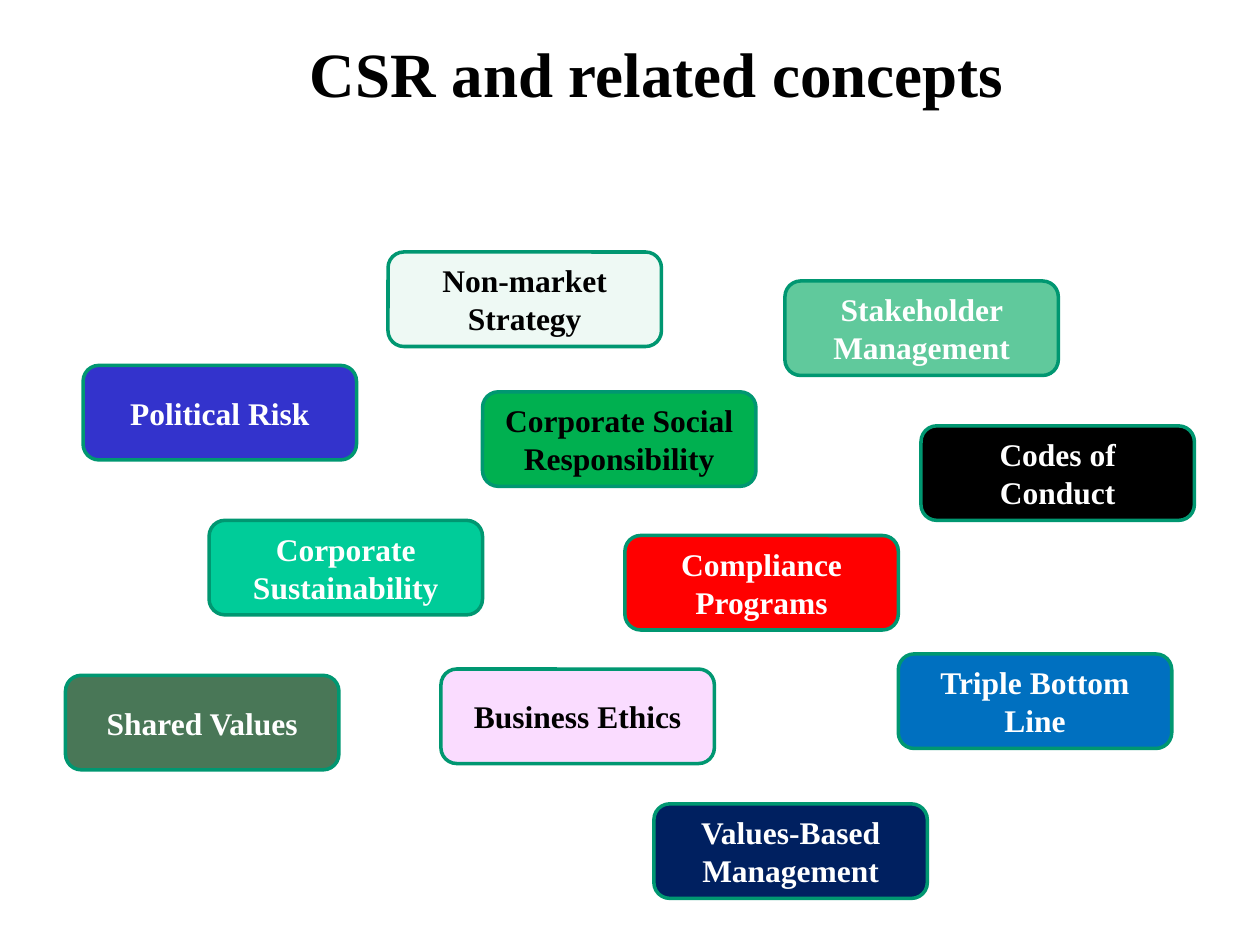
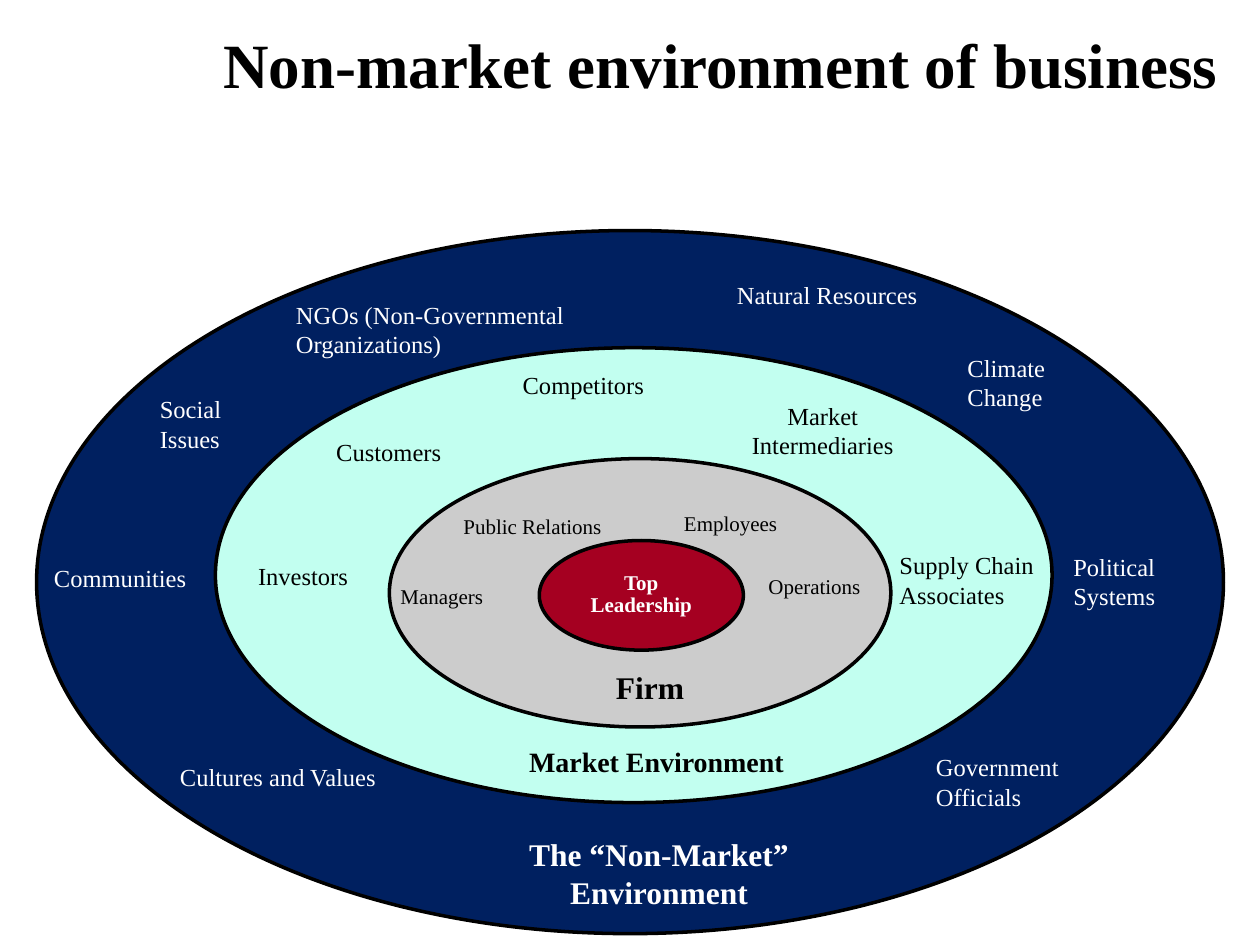
from pptx import Presentation
from pptx.dml.color import RGBColor
from pptx.enum.shapes import MSO_SHAPE
from pptx.enum.text import MSO_ANCHOR, MSO_AUTO_SIZE, PP_ALIGN
from pptx.util import Inches, Pt

LEFT, CENTER = PP_ALIGN.LEFT, PP_ALIGN.CENTER
TOP, MIDDLE = MSO_ANCHOR.TOP, MSO_ANCHOR.MIDDLE
ROUNDED, ELLIPSE = MSO_SHAPE.ROUNDED_RECTANGLE, MSO_SHAPE.OVAL
FIXED, GROW = MSO_AUTO_SIZE.NONE, MSO_AUTO_SIZE.SHAPE_TO_FIT_TEXT

FONT = "Times New Roman"
TITLE_ONLY = 5
COLORS = {
    "black": "000000", "white": "FFFFFF", "border": "009771",
    "indigo": "3333CC", "blue": "0070C0", "teal": "00CC99",
    "pale green": "EEF9F4", "green": "00B050", "pink": "FADCFF",
    "soft green": "60C99C", "red": "FF0000", "moss": "497757",
    "navy": "002060", "mint": "C2FFF0", "gray": "CCCCCC",
    "crimson": "A50021",
}


def write_text(shape, text, size, color, bold=False, align=LEFT, anchor=TOP, spacing=None):
    frame = shape.text_frame
    frame.text = text
    frame.word_wrap = True
    frame.auto_size = FIXED
    frame.vertical_anchor = anchor
    for para in frame.paragraphs:
        para.alignment = align
        para.line_spacing = spacing
        for span in para.runs:
            span.font.name = FONT
            span.font.size = Pt(size)
            span.font.bold = bold
            span.font.color.rgb = RGBColor.from_string(COLORS[color])


def add_outlined(shapes, kind, bounds, fill, line):
    shape = shapes.add_shape(kind, *map(Inches, bounds))
    shape.shadow.inherit = False
    shape.fill.solid()
    shape.fill.fore_color.rgb = RGBColor.from_string(COLORS[fill])
    shape.line.color.rgb = RGBColor.from_string(COLORS[line])
    shape.line.width = Pt(2)
    return shape


deck = Presentation()
deck.slide_width, deck.slide_height = Inches(10), Inches(7.5)

titles = [
    ("CSR and related concepts", (2.36, 0.29, 6.83, 0.75)),
    ("Non-market environment of business", (1.67, 0.22, 8.17, 0.76)),
]
for text, bounds in titles:
    page = deck.slides.add_slide(deck.slide_layouts[TITLE_ONLY])
    title = page.shapes.title
    title.left, title.top, title.width, title.height = map(Inches, bounds)
    write_text(title, text, 36, "black", bold=True, spacing=0.9)
concepts_page, environment_page = deck.slides

# Slide 1: scattered concept cards
CARD_WIDTH, CARD_HEIGHT = 2.17, 0.75
concepts = [
    ("Political Risk", 0.66, 2.9, "indigo", "white"),
    ("Triple Bottom Line", 7.13, 5.19, "blue", "white"),
    ("Corporate Sustainability", 1.66, 4.13, "teal", "white"),
    ("Non-market Strategy", 3.08, 2, "pale green", "black"),
    ("Corporate Social Responsibility", 3.83, 3.11, "green", "black"),
    ("Business Ethics", 3.5, 5.31, "pink", "black"),
    ("Stakeholder Management", 6.23, 2.23, "soft green", "white"),
    ("Compliance Programs", 4.96, 4.25, "red", "white"),
    ("Shared Values", 0.52, 5.36, "moss", "white"),
    ("Codes of Conduct", 7.31, 3.38, "black", "white"),
    ("Values-Based Management", 5.19, 6.38, "navy", "white"),
]
for text, left, top, fill, color in concepts:
    bounds = (left, top, CARD_WIDTH, CARD_HEIGHT)
    card = add_outlined(concepts_page.shapes, ROUNDED, bounds, fill, "border")
    write_text(card, text, 18, color, bold=True, align=CENTER, anchor=MIDDLE)
    card.text_frame.margin_left = card.text_frame.margin_right = Inches(0.12)

# Slide 2: nested environments, from the outside in
rings = environment_page.shapes.add_group_shape()
environments = [
    ((0.29, 1.83, 9.42, 5.58), "navy"),
    ((1.71, 2.76, 6.64, 3.61), "mint"),
    ((3.09, 3.64, 3.98, 2.13), "gray"),
    ((4.28, 4.29, 1.62, 0.87), "crimson"),
]
for bounds, fill in environments:
    add_outlined(rings.shapes, ELLIPSE, bounds, fill, "black")

core = rings.shapes.add_textbox(*map(Inches, (4.52, 4.5, 1.14, 0.44)))
write_text(core, "Top Leadership", 12, "white", bold=True, align=CENTER,
           anchor=MIDDLE, spacing=0.9)
frame = core.text_frame
frame.margin_left = frame.margin_right = Inches(0.09)
frame.margin_top = frame.margin_bottom = Inches(0.09)

# Label styles: size, color, bold, alignment
STYLES = {
    "firm name": (18, "black", True, LEFT),
    "market name": (16, "black", True, CENTER),
    "non-market name": (18, "white", True, CENTER),
    "firm": (12, "black", False, LEFT),
    "market": (14, "black", False, LEFT),
    "market centered": (14, "black", False, CENTER),
    "non-market": (14, "white", False, LEFT),
}
labels = [
    ("Firm", "firm name", (4.79, 5.25, 1.58, 0.4)),
    ("Operations", "firm", (6, 4.5, 1.08, 0.3)),
    ("Government\nOfficials", "non-market", (7.33, 5.92, 1.55, 0.57)),
    ("Customers", "market", (2.57, 3.42, 1.37, 0.34)),
    ("Market Intermediaries", "market centered", (5.73, 3.13, 1.6, 0.57)),
    ("Market Environment", "market name", (3.75, 5.86, 2.92, 0.37)),
    ("The “Non-Market” Environment", "non-market name", (3.94, 6.58, 2.58, 0.71)),
    ("Communities", "non-market", (0.33, 4.42, 1.33, 0.34)),
    ("Supply Chain\nAssociates", "market", (7.04, 4.32, 1.38, 0.57)),
    ("Managers", "firm", (3.08, 4.58, 1.29, 0.3)),
    ("Employees", "firm", (5.33, 4, 1.08, 0.3)),
    ("Competitors", "market", (4.05, 2.89, 1.37, 0.34)),
    ("Natural Resources", "non-market", (5.75, 2.17, 1.73, 0.34)),
    ("Investors", "market", (1.95, 4.4, 1.07, 0.34)),
    ("NGOs (Non-Governmental Organizations)", "non-market", (2.25, 2.33, 2.94, 0.57)),
    ("Social\nIssues", "non-market", (1.17, 3.08, 0.69, 0.57)),
    ("Climate\nChange", "non-market", (7.58, 2.75, 0.82, 0.57)),
    ("Political\nSystems", "non-market", (8.42, 4.33, 1.42, 0.57)),
    ("Cultures and Values", "non-market", (1.33, 6, 1.77, 0.34)),
    ("Public Relations", "firm", (3.58, 4.03, 1.83, 0.3)),
]
UNWRAPPED = {"Social\nIssues", "Climate\nChange", "Cultures and Values"}
for text, style, bounds in labels:
    label = environment_page.shapes.add_textbox(*map(Inches, bounds))
    write_text(label, text, *STYLES[style])
    label.text_frame.word_wrap = text not in UNWRAPPED
    label.text_frame.auto_size = GROW

deck.save("out.pptx")
